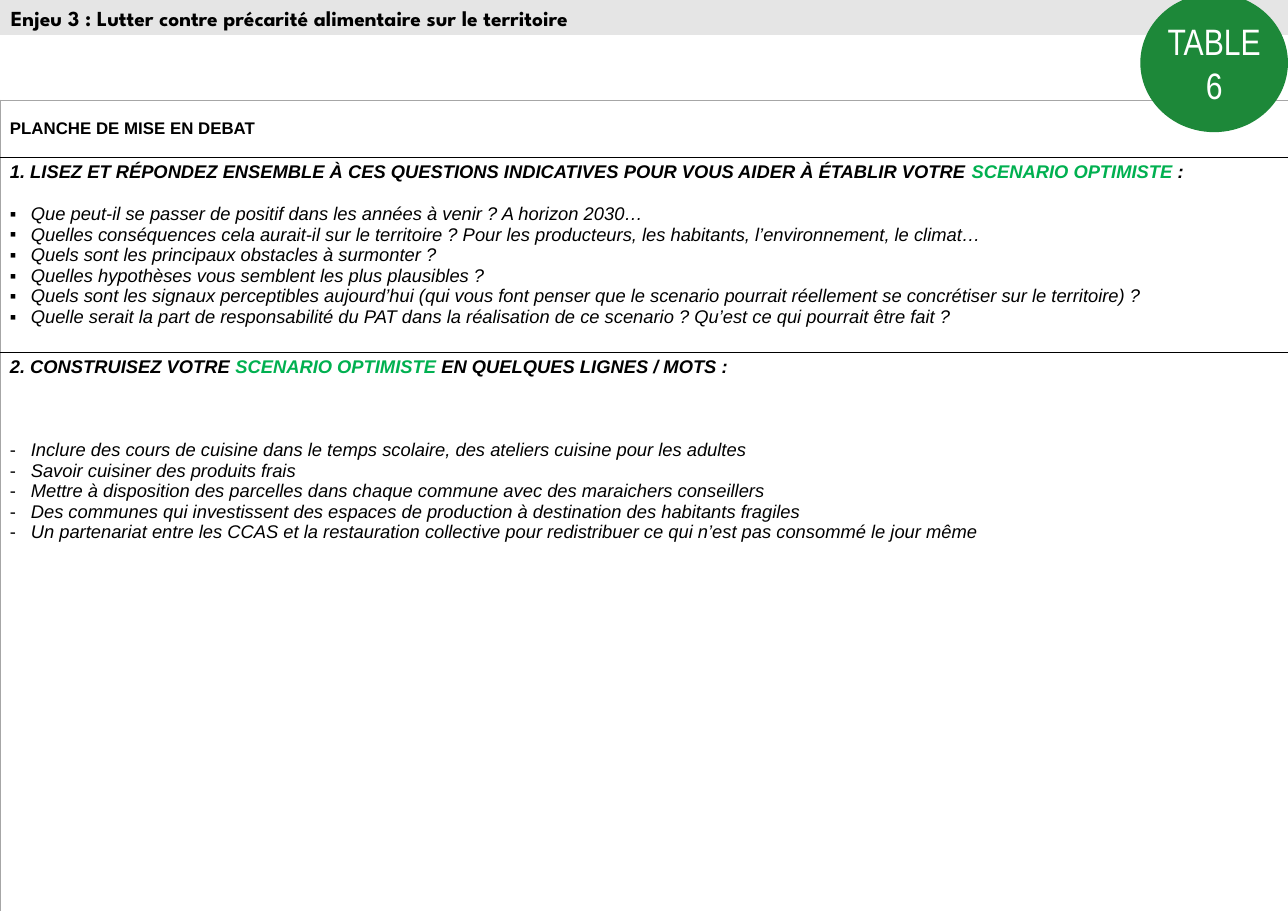
from lxml import etree
from pptx import Presentation
from pptx.dml.color import RGBColor
from pptx.enum.shapes import MSO_SHAPE
from pptx.enum.text import MSO_ANCHOR, PP_ALIGN
from pptx.oxml.ns import qn
from pptx.util import Inches, Pt

RECT, OVAL = MSO_SHAPE.RECTANGLE, MSO_SHAPE.OVAL
TOP, MIDDLE = MSO_ANCHOR.TOP, MSO_ANCHOR.MIDDLE
LEFT, CENTER = PP_ALIGN.LEFT, PP_ALIGN.CENTER
COLS, ROWS = 1169, 827
BLACK, WHITE, GREEN, GRAY = "000000", "FFFFFF", "00B050", "A6A6A6"

QUESTIONS = [
    "Que peut-il se passer de positif dans les années à venir ? A horizon 2030…",
    "Quelles conséquences cela aurait-il sur le territoire ? Pour les producteurs, les habitants, l’environnement, le climat…",
    "Quels sont les principaux obstacles à surmonter ?",
    "Quelles hypothèses vous semblent les plus plausibles ?",
    "Quels sont les signaux perceptibles aujourd’hui (qui vous font penser que le scenario pourrait réellement se concrétiser sur le territoire) ?",
    "Quelle serait la part de responsabilité du PAT dans la réalisation de ce scenario ? Qu’est ce qui pourrait être fait ?",
]
IDEAS = [
    "Inclure des cours de cuisine dans le temps scolaire, des ateliers cuisine pour les adultes",
    "Savoir cuisiner des produits frais",
    "Mettre à disposition des parcelles dans chaque commune avec des maraichers conseillers",
    "Des communes qui investissent des espaces de production à destination des habitants fragiles",
    "Un partenariat entre les CCAS et la restauration collective pour redistribuer ce qui n’est pas consommé le jour même",
]
ASK = ("1. LISEZ ET RÉPONDEZ ENSEMBLE À CES QUESTIONS INDICATIVES POUR VOUS AIDER À ÉTABLIR VOTRE ", ":")
BUILD = ("2. CONSTRUISEZ VOTRE ", "EN QUELQUES LIGNES / MOTS :")


def color(code):
    return RGBColor.from_string(code)


class Board:
    def __init__(self, deck):
        self.slide = deck.slides.add_slide(deck.slide_layouts[6])
        self.col = deck.slide_width / COLS
        self.row = deck.slide_height / ROWS

    def place(self, x, y, w, h):
        return [round(n * unit) for n, unit in zip((x, y, w, h), (self.col, self.row) * 2)]

    def style(self, run, size, face="Arial", ink=BLACK, bold=False, italic=False):
        font = run.font
        font.size, font.name = Pt(size), face
        font.bold, font.italic = bold, italic
        font.color.rgb = color(ink)

    def shape(self, kind, box, fill):
        item = self.slide.shapes.add_shape(kind, *self.place(*box))
        item.shadow.inherit = False
        item.fill.solid()
        item.fill.fore_color.rgb = color(fill)
        item.line.fill.background()
        return item

    def label(self, item, text, size, face, ink, align, anchor, inset, bold=False):
        frame = item.text_frame
        frame.text = text
        frame.word_wrap = True
        frame.vertical_anchor = anchor
        frame.margin_left = frame.margin_right = Inches(inset)
        frame.margin_top = frame.margin_bottom = Inches(min(inset, 0.05))
        frame.paragraphs[0].alignment = align
        self.style(frame.paragraphs[0].runs[0], size, face, ink, bold)

    def table(self, box, heights):
        grid = self.slide.shapes.add_table(len(heights), 1, *self.place(*box)).table
        grid.first_row = grid.horz_banding = False
        cells = []
        for i, high in enumerate(heights):
            grid.rows[i].height = round(high * self.row)
            cell = grid.cell(i, 0)
            top = (GRAY, 0.5) if i == 0 else (BLACK, 1)
            low = (GRAY, 0.5) if i == len(heights) - 1 else (BLACK, 1)
            self.border(cell, L=(GRAY, 0.5), R=(GRAY, 0.5), T=top, B=low)
            cell.fill.solid()
            cell.fill.fore_color.rgb = color(WHITE)
            cell.margin_left = cell.margin_right = Inches(0.09)
            cell.margin_top = cell.margin_bottom = Inches(0.04)
            cells.append(cell)
        return cells

    def border(self, cell, **sides):
        props = cell._tc.get_or_add_tcPr()
        for side, (ink, width) in sides.items():
            line = etree.SubElement(props, qn(f"a:ln{side}"), w=str(Pt(width)))
            fill = etree.SubElement(line, qn("a:solidFill"))
            etree.SubElement(fill, qn("a:srgbClr"), val=ink)

    def section(self, cell, head, mark, items, gap):
        frame = cell.text_frame
        start, end = head
        for text, ink in ((start, BLACK), ("SCENARIO OPTIMISTE ", GREEN), (end, BLACK)):
            run = frame.paragraphs[0].add_run()
            run.text = text
            self.style(run, 12, ink=ink, bold=True, italic=True)
        for i, text in enumerate(items):
            para = frame.add_paragraph()
            para.text = text
            self.bullet(para, mark)
            para.space_before = Pt(0 if i else gap)
            self.style(para.runs[0], 12, italic=True)

    def bullet(self, para, mark):
        props = para._p.get_or_add_pPr()
        props.set("marL", str(Inches(0.19)))
        props.set("indent", str(Inches(-0.19)))
        tint = etree.SubElement(props, qn("a:buClr"))
        etree.SubElement(tint, qn("a:srgbClr"), val=BLACK)
        etree.SubElement(props, qn("a:buFont"), typeface="Arial")
        etree.SubElement(props, qn("a:buChar"), char=mark)


def main():
    deck = Presentation()
    deck.slide_width, deck.slide_height = Inches(11.69), Inches(8.27)
    board = Board(deck)

    title, ask, build = board.table((0, 91, COLS, 736), (52, 177, 507))
    title.text_frame.text = "PLANCHE DE MISE EN DEBAT"
    title.vertical_anchor = MIDDLE
    board.style(title.text_frame.paragraphs[0].runs[0], 11, bold=True)
    board.section(ask, ASK, "▪", QUESTIONS, 14)
    board.section(build, BUILD, "-", IDEAS, 41)

    band = board.shape(RECT, (0, 0, COLS, 34), "E5E5E5")
    board.label(band, "Enjeu 3 : Lutter contre précarité alimentaire sur le territoire",
                14, "League Spartan", BLACK, LEFT, TOP, 0.1, True)
    board.shape(RECT, (0, 32, COLS, 30), WHITE)
    badge = board.shape(OVAL, (1035, -6, 134, 126), "1D8839")
    board.label(badge, "TABLE 6", 24, "Arial Narrow", WHITE, CENTER, MIDDLE, 0.04)

    deck.save("out.pptx")


if __name__ == "__main__":
    main()
